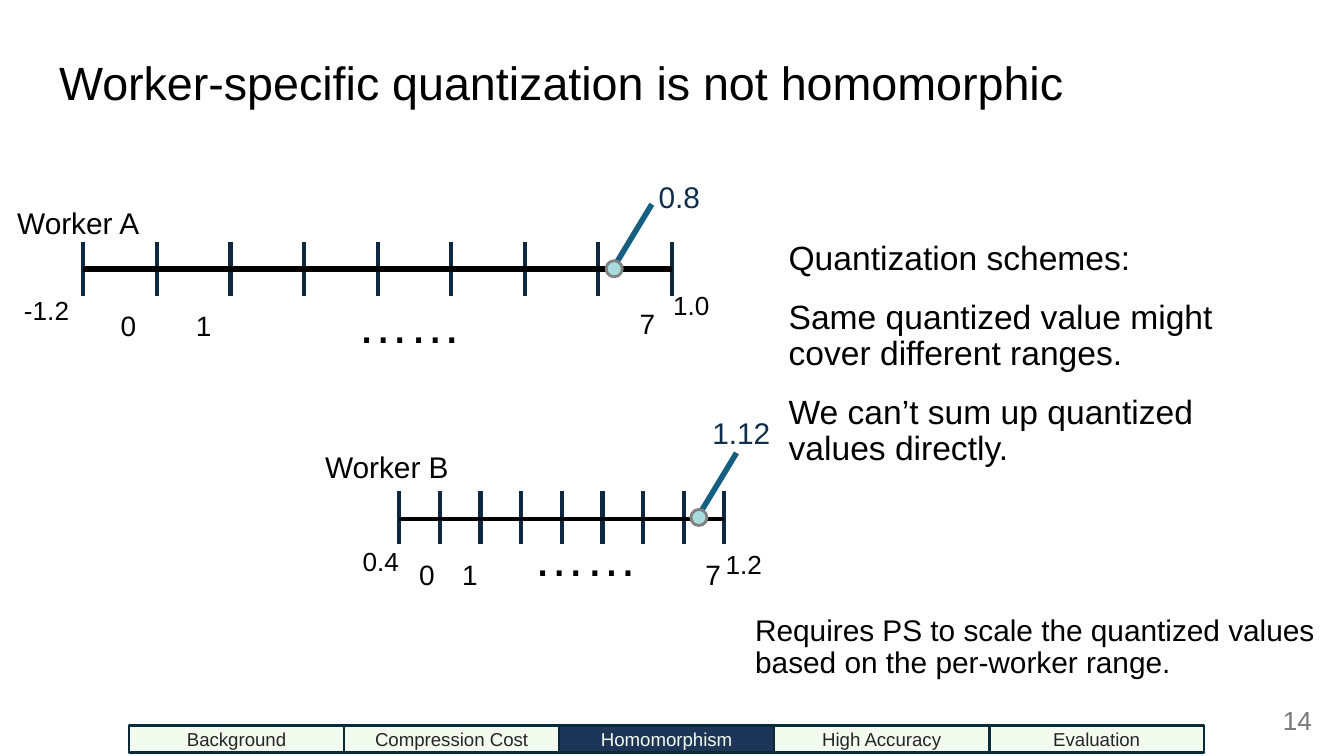
import pptx
import pptx.dml.color
import pptx.enum.shapes
import pptx.enum.text
import pptx.oxml.ns
import pptx.util
from lxml import etree

Inches = pptx.util.Inches
Pt = pptx.util.Pt
RGBColor = pptx.dml.color.RGBColor
SHAPE = pptx.enum.shapes.MSO_SHAPE
ALIGN = pptx.enum.text.PP_ALIGN
ANCHOR = pptx.enum.text.MSO_ANCHOR

FONT = "Arial"
BLACK = RGBColor(0x00, 0x00, 0x00)
TICK = RGBColor(0x0E, 0x28, 0x41)
POINTER = RGBColor(0x15, 0x60, 0x82)
VALUE = RGBColor(0x0F, 0x2E, 0x4C)
DOT_FILL = RGBColor(0xA8, 0xDB, 0xDC)
DOT_LINE = RGBColor(0x80, 0x80, 0x80)
PAGE_GREY = RGBColor(0x79, 0x79, 0x79)
NAV_FILL = RGBColor(0xF2, 0xFB, 0xEE)
NAV_ACTIVE = RGBColor(0x1D, 0x35, 0x57)
NAV_LINE = RGBColor(0x09, 0x2A, 0x39)
NAV_TEXT = RGBColor(0x26, 0x26, 0x26)

INTERVALS = 8
SECTIONS = ["Background", "Compression Cost", "Homomorphism", "High Accuracy", "Evaluation"]
CURRENT_SECTION = "Homomorphism"

# Boxes are left, top, width, height; every length is in inches.
WORKERS = [
    {
        "axis": (0.62, 5, 2), "tick_top": 1.8, "dot": (4.57, 2), "axis_width": 3,
        "name": ("Worker A", (0.03, 1.42, 1.45, 0.47)),
        "bounds": [("-1.2", (0.08, 2.09, 0.68, 0.44)), ("1.0", (4.91, 2.05, 0.6, 0.44))],
        "codes": [("0", 0.8, 2.25), ("1", 1.36, 2.25), ("7", 4.66, 2.23)],
        "dots": (2.35, 2.12, 1.39, 0.57),
        "value": ("0.8", (4.85, 1.28, 0.6, 0.37)),
    },
    {
        "axis": (2.97, 5.39, 3.86), "tick_top": 3.65, "dot": (5.2, 3.85), "axis_width": 2.25,
        "name": ("Worker B", (2.32, 3.24, 1.45, 0.47)),
        "bounds": [("0.4", (2.6, 3.96, 0.56, 0.44)), ("1.2", (5.3, 3.98, 0.52, 0.44))],
        "codes": [("0", 3.02, 4.1), ("1", 3.34, 4.1), ("7", 5.15, 4.1)],
        "dots": (3.66, 3.85, 1.39, 0.57),
        "value": ("1.12", (5.25, 3.04, 0.6, 0.37)),
    },
]


def place(sp, box):
    sp.left, sp.top, sp.width, sp.height = [Inches(v) for v in box]


def write(sp, text, size, color=BLACK, align=ALIGN.LEFT, anchor=ANCHOR.TOP,
          insets=(0.1, 0.1), spacing=1.0, gap=0):
    """Fill a shape with text; insets are horizontal and vertical, gap is points before a paragraph."""
    tf = sp.text_frame
    tf.word_wrap = True
    tf.auto_size = pptx.enum.text.MSO_AUTO_SIZE.NONE
    tf.vertical_anchor = anchor
    tf.margin_left = tf.margin_right = Inches(insets[0])
    tf.margin_top = tf.margin_bottom = Inches(insets[1])
    tf.text = text
    for i, p in enumerate(tf.paragraphs):
        p.alignment = align
        p.line_spacing = spacing
        p.space_before = Pt(gap if i else 0)
        for r in p.runs:
            r.font.name = FONT
            r.font.size = Pt(size)
            r.font.color.rgb = color


def add_text(s, text, box, size, **style):
    sp = s.shapes.add_textbox(*[Inches(v) for v in box])
    write(sp, text, size, **style)


def add_line(s, start, end, color, width):
    line = s.shapes.add_connector(
        pptx.enum.shapes.MSO_CONNECTOR.STRAIGHT, *[Inches(v) for v in (*start, *end)])
    line.line.color.rgb = color
    line.line.width = Pt(width)
    etree.SubElement(line._element.spPr, pptx.oxml.ns.qn("a:effectLst"))


def add_outlined(s, kind, box, fill, outline):
    sp = s.shapes.add_shape(kind, *[Inches(v) for v in box])
    sp.shadow.inherit = False
    sp.fill.solid()
    sp.fill.fore_color.rgb = fill
    sp.line.color.rgb = outline
    sp.line.width = Pt(1.5)
    return sp


def add_worker(s, worker):
    """Draw one worker's number line with its labels and its marked value."""
    left, right, y = worker["axis"]
    top = worker["tick_top"]
    for i in range(INTERVALS + 1):
        x = left + i * (right - left) / INTERVALS
        add_line(s, (x, top + 0.4), (x, top), TICK, 2.25)
    add_line(s, (left, y), (right, y), BLACK, worker["axis_width"])

    add_text(s, *worker["name"], 16)
    for text, box in worker["bounds"]:
        add_text(s, text, box, 14)
    for text, x, code_top in worker["codes"]:
        add_text(s, text, (x, code_top, 0.22, 0.35), 15, align=ALIGN.CENTER, insets=(0.1, 0.05))
    add_text(s, "……", worker["dots"], 28, align=ALIGN.CENTER, insets=(0.1, 0.05))

    x, y = worker["dot"]
    add_line(s, (x + 0.02, y - 0.05), (x + 0.28, y - 0.48), POINTER, 3)
    add_outlined(s, SHAPE.OVAL, (x - 0.06, y - 0.06, 0.12, 0.12), DOT_FILL, DOT_LINE)
    add_text(s, *worker["value"], 16, color=VALUE, insets=(0.05, 0.05))


def add_navigation(s):
    for i, section in enumerate(SECTIONS):
        active = section == CURRENT_SECTION
        sp = add_outlined(s, SHAPE.RECTANGLE, (0.96 + 1.6 * i, 5.4, 1.6, 0.2),
                          NAV_ACTIVE if active else NAV_FILL, NAV_LINE)
        write(sp, section, 10, color=NAV_FILL if active else NAV_TEXT,
              align=ALIGN.CENTER, anchor=ANCHOR.MIDDLE, insets=(0.1, 0.05))


def main():
    prs = pptx.Presentation()
    prs.slide_width = Inches(10)
    prs.slide_height = Inches(10 * 9 / 16)
    s = prs.slides.add_slide(prs.slide_layouts.get_by_name("Title Only"))

    place(s.shapes.title, (0.34, 0.35, 9.3, 0.78))
    write(s.shapes.title, "Worker-specific quantization is not homomorphic", 25, spacing=0.9)

    for worker in WORKERS:
        add_worker(s, worker)

    schemes = "\n".join([
        "Quantization schemes:",
        "Same quantized value might cover different ranges.",
        "We can’t sum up quantized values directly.",
    ])
    add_text(s, schemes, (5.77, 1.7, 3.5, 2.35), 18, spacing=0.9, gap=12)
    add_text(s, "Requires PS to scale the quantized values based on the per-worker range.",
             (5.52, 4.48, 4.61, 0.88), 16, spacing=0.9)

    add_navigation(s)
    add_text(s, "14", (7.61, 5.21, 2.25, 0.3), 14, color=PAGE_GREY,
             align=ALIGN.RIGHT, anchor=ANCHOR.MIDDLE, insets=(0.1, 0.05))
    prs.save("out.pptx")


if __name__ == "__main__":
    main()
